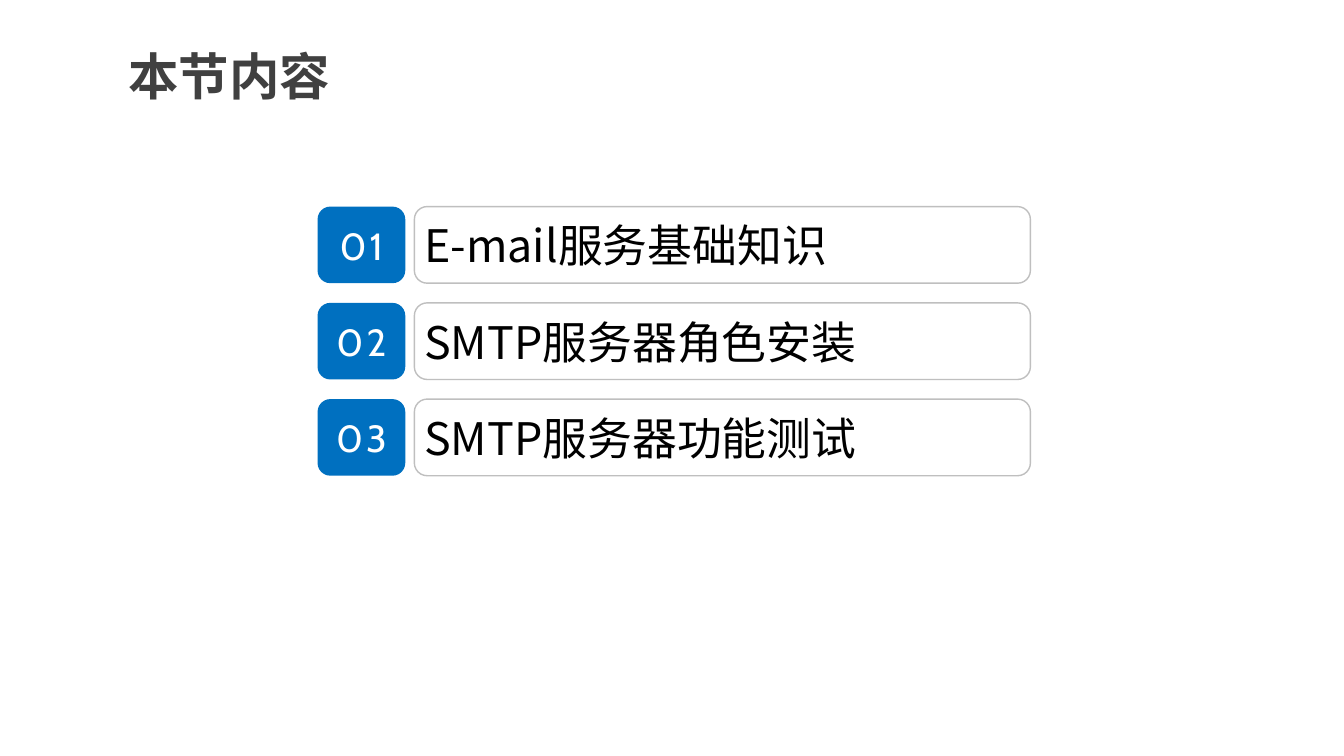
from lxml import etree
from pptx import Presentation
from pptx.dml.color import RGBColor
from pptx.enum import shapes, text
from pptx.oxml.ns import qn
from pptx.util import Inches, Pt

COLORS = {"title": "404040", "badge": "0070C0", "border": "BFBFBF",
          "white": "FFFFFF", "black": "000000"}
CJK_FONT = "Noto Sans CJK SC"


def write(box, words, size, font, color, align, bold=False, spacing=0):
    frame = box.text_frame
    frame.word_wrap = True
    para = frame.paragraphs[0]
    para.text = words
    para.alignment = align
    para.font.size = Pt(size)
    para.font.bold = bold
    para.font.name = font
    para.font.color.rgb = RGBColor.from_string(COLORS[color])
    # East Asian font and letter spacing
    defaults = para._p.pPr.find(qn("a:defRPr"))
    etree.SubElement(defaults, qn("a:ea")).set("typeface", CJK_FONT)
    if spacing:
        defaults.set("spc", str(round(spacing * 100)))


def add_rounded(left, top, width):
    box = page.shapes.add_shape(shapes.MSO_SHAPE.ROUNDED_RECTANGLE, Inches(left),
                                Inches(top), Inches(width), Inches(0.76))
    box.shadow.inherit = False
    box.text_frame.vertical_anchor = text.MSO_ANCHOR.MIDDLE
    return box


deck = Presentation()
deck.slide_width, deck.slide_height = Inches(13.33), Inches(7.5)
page = deck.slides.add_slide(deck.slide_layouts[6])

# Title
title = page.shapes.add_textbox(Inches(1.13), Inches(0.4), Inches(2.29), Inches(0.71))
write(title, "本节内容", 36, "Arial", "title", text.PP_ALIGN.CENTER, bold=True)

# Agenda rows: numbered badge and topic
topics = ["E-mail服务基础知识", "SMTP服务器角色安装", "SMTP服务器功能测试"]
for index, topic in enumerate(topics):
    top = 2.05 + index * 0.955

    badge = add_rounded(3.15, top, 0.87)
    badge.fill.solid()
    badge.fill.fore_color.rgb = RGBColor.from_string(COLORS["badge"])
    badge.line.fill.background()
    write(badge, f"{index + 1:02}", 27, "Cabin", "white",
          text.PP_ALIGN.CENTER, spacing=2.2)

    bar = add_rounded(4.11, top, 6.11)
    bar.fill.background()
    bar.line.color.rgb = RGBColor.from_string(COLORS["border"])
    bar.line.width = Pt(1)
    frame = bar.text_frame
    frame.margin_left = frame.margin_right = Inches(0.06)
    frame.margin_top = frame.margin_bottom = Inches(0.03)
    write(bar, topic, 32, CJK_FONT, "black", text.PP_ALIGN.LEFT)

deck.save("out.pptx")
